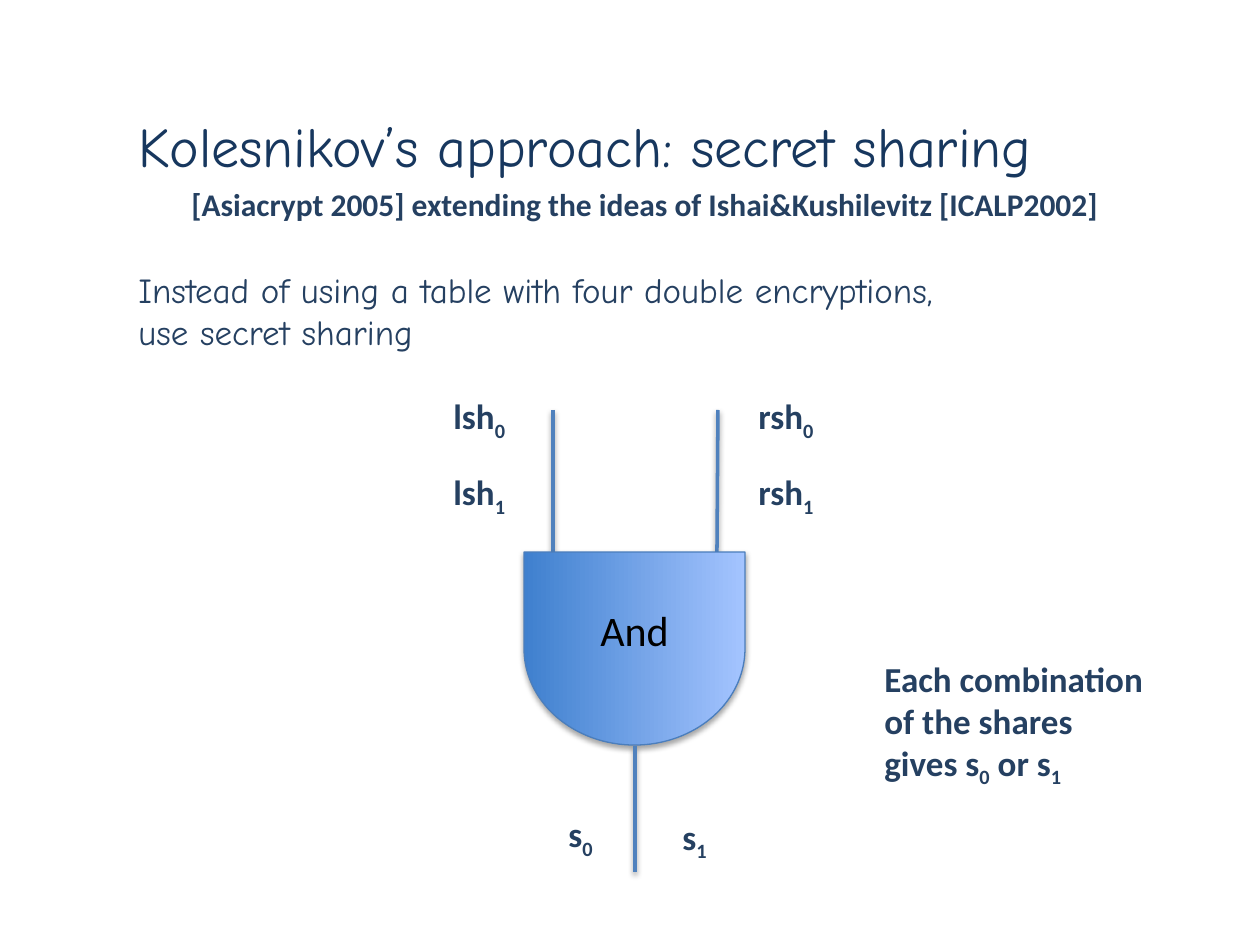
import pptx
import pptx.util
import pptx.dml.color
import pptx.enum.shapes
import pptx.enum.text
import pptx.oxml.ns
import lxml.etree

THEME = {
    "title": {"font": "Comic Neue", "size": 32, "color": "17375E", "bold": False},
    "body": {"font": "Comic Neue", "size": 20, "color": "254061", "bold": False},
    "subtitle": {"font": "Calibri", "size": 18, "color": "254061", "bold": True},
    "label": {"font": "Calibri", "size": 20, "color": "254061", "bold": True},
    "gate": {"font": "Calibri", "size": 24, "color": "000000", "bold": False},
    "wire": "4F81BD",
    "gate_line": "4B7EBC",
    "gate_fill": ("3F80CE", "A4C4FF"),
}

TITLE = ["Kolesnikov’s approach: secret sharing"]
SUBTITLE = ["[Asiacrypt 2005] extending the ideas of Ishai&Kushilevitz [ICALP2002]"]
BODY = ["Instead of using a table with four double encryptions,", "use secret sharing"]
NOTE = [("Each combination of the shares gives s", "0", " or s", "1")]
INPUT_SHARES = [("lsh", 441, 80), ("rsh", 746, 83)]
OUTPUT_SHARES = [("0", 556, 806), ("1", 670, 809)]
INPUT_WIRES = [((718, 410), (717, 552)), ((553, 410), (553, 552))]
OUTPUT_WIRE = ((635, 746), (635, 872))
GATE = (538, 538, 193, 221)
SHARE_TOP, SHARE_STEP, SHARE_HEIGHT = 388, 76, 55


def px(length):
    return pptx.util.Emu(round(length * 914400 / 126))


def rgb(color):
    return pptx.dml.color.RGBColor.from_string(color)


def add_text(shapes, at, paragraphs, style, wrap=False):
    box = shapes.add_textbox(*map(px, at))
    frame = box.text_frame
    frame.word_wrap = wrap
    frame.auto_size = pptx.enum.text.MSO_AUTO_SIZE.SHAPE_TO_FIT_TEXT
    look = THEME[style]
    for index, content in enumerate(paragraphs):
        para = frame.add_paragraph() if index else frame.paragraphs[0]
        para.font.name = look["font"]
        para.font.size = pptx.util.Pt(look["size"])
        para.font.bold = look["bold"]
        para.font.color.rgb = rgb(look["color"])
        parts = (content,) if isinstance(content, str) else content
        for position, words in enumerate(parts):
            span = para.add_run()
            span.text = words
            if position % 2:
                span._r.get_or_add_rPr().set("baseline", "-25000")


def add_shadow(shape, distance, opacity):
    qn = pptx.oxml.ns.qn
    effects = lxml.etree.SubElement(shape._element.spPr, qn("a:effectLst"))
    shadow = lxml.etree.SubElement(
        effects, qn("a:outerShdw"), blurRad="40000", dist=str(distance),
        dir="5400000", rotWithShape="0")
    color = lxml.etree.SubElement(shadow, qn("a:srgbClr"), val="000000")
    lxml.etree.SubElement(color, qn("a:alpha"), val=str(opacity * 1000))


def add_wire(shapes, start, end):
    wire = shapes.add_connector(
        pptx.enum.shapes.MSO_CONNECTOR.STRAIGHT, *map(px, start + end))
    wire.line.color.rgb = rgb(THEME["wire"])
    wire.line.width = pptx.util.Pt(2)
    add_shadow(wire, 20000, 38)


def add_gate(shapes):
    gate = shapes.add_shape(
        pptx.enum.shapes.MSO_SHAPE.FLOWCHART_DELAY, *map(px, GATE))
    gate.rotation = 90
    gate.fill.gradient()
    gate.fill.gradient_angle = 90
    for index, color in enumerate(THEME["gate_fill"]):
        stop = gate.fill.gradient_stops[index]
        stop.color.rgb = rgb(color)
        stop.position = index
    gate.line.color.rgb = rgb(THEME["gate_line"])
    gate.line.width = pptx.util.Pt(0.75)
    add_shadow(gate, 23000, 35)


def main():
    deck = pptx.Presentation()
    deck.slide_width, deck.slide_height = px(1260), px(945)
    page = deck.slides.add_slide(deck.slide_layouts[6])
    shapes = page.shapes

    add_text(shapes, (126, 105, 1036, 81), TITLE, "title")
    add_text(shapes, (126, 262, 914, 97), BODY, "body")

    group = shapes.add_group_shape().shapes
    for start, end in INPUT_WIRES:
        add_wire(group, start, end)
    add_gate(group)
    add_text(group, (588, 598, 94, 63), ["And"], "gate")
    add_wire(shapes, *OUTPUT_WIRE)

    for name, left, width in INPUT_SHARES:
        for bit in range(2):
            at = (left, SHARE_TOP + bit * SHARE_STEP, width, SHARE_HEIGHT)
            add_text(shapes, at, [(name, str(bit))], "label")
    for bit, left, top in OUTPUT_SHARES:
        add_text(shapes, (left, top, 52, SHARE_HEIGHT), [("s", bit)], "label")

    add_text(shapes, (872, 651, 284, 140), NOTE, "label", wrap=True)
    add_text(shapes, (179, 179, 941, 50), SUBTITLE, "subtitle")
    deck.save("out.pptx")


if __name__ == "__main__":
    main()
